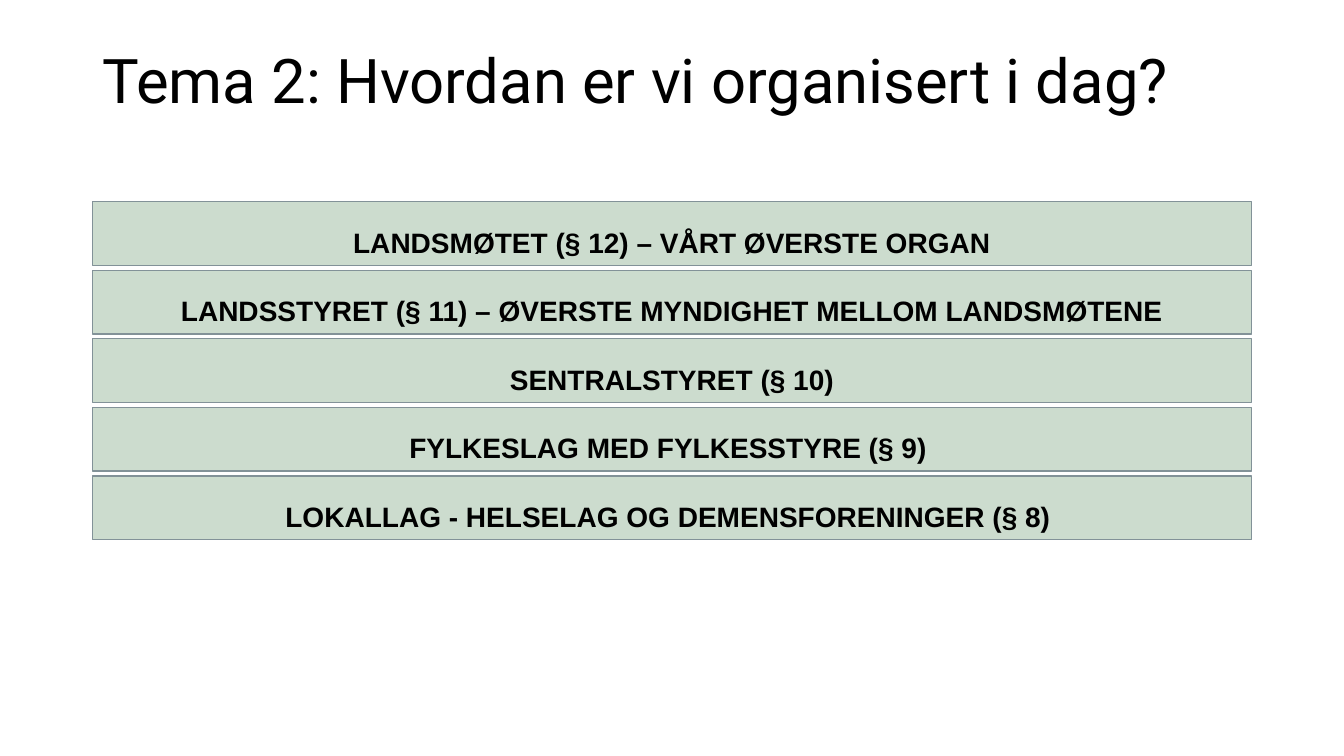
from pptx import Presentation
from pptx import util as u
from pptx.dml.color import RGBColor
from pptx.enum import shapes, text

BLACK = RGBColor(0x00, 0x00, 0x00)
SAGE = RGBColor(0xCC, 0xDC, 0xCE)
SLATE = RGBColor(0x82, 0x92, 0x98)

LEFT, WIDTH = 66, 828
FIRST_LEVEL_TOP, LEVEL_HEIGHT, LEVEL_PITCH = 144, 45.5, 49

LEVELS = [
    "LANDSMØTET (§ 12) – VÅRT ØVERSTE ORGAN",
    "LANDSSTYRET (§ 11) – ØVERSTE MYNDIGHET MELLOM LANDSMØTENE",
    "SENTRALSTYRET (§ 10)",
    "FYLKESLAG MED FYLKESSTYRE (§ 9) ",
    "LOKALLAG - HELSELAG OG DEMENSFORENINGER (§ 8) ",
]


class OrganisationSlide:
    def __init__(self, slide):
        self.slide = slide
        self.title_font = "Roboto"
        self.level_font = "Arial"

    def set_wording(self, shape, wording, font_name, size, bold, align, spacing):
        """Put one formatted, vertically centred paragraph in a shape."""
        frame = shape.text_frame
        frame.text = wording
        frame.word_wrap = True
        frame.vertical_anchor = text.MSO_ANCHOR.MIDDLE
        paragraph = frame.paragraphs[0]
        paragraph.alignment = align
        paragraph.line_spacing = spacing
        font = paragraph.runs[0].font
        font.name, font.size, font.bold = font_name, u.Pt(size), bold
        font.color.rgb = BLACK

    def title(self, wording, top, height):
        heading = self.slide.shapes.add_textbox(
            u.Pt(LEFT), u.Pt(top), u.Pt(WIDTH), u.Pt(height))
        self.set_wording(heading, wording, self.title_font, 44, False,
                         text.PP_ALIGN.LEFT, 0.9)

    def level(self, wording, top):
        bar = self.slide.shapes.add_shape(
            shapes.MSO_SHAPE.RECTANGLE,
            u.Pt(LEFT), u.Pt(top), u.Pt(WIDTH), u.Pt(LEVEL_HEIGHT))
        bar.shadow.inherit = False
        bar.fill.solid()
        bar.fill.fore_color.rgb = SAGE
        bar.line.color.rgb = SLATE
        bar.line.width = u.Pt(1)
        self.set_wording(bar, wording, self.level_font, 20, True,
                         text.PP_ALIGN.CENTER, 1.5)


def main():
    deck = Presentation()
    deck.slide_width, deck.slide_height = u.Pt(960), u.Pt(540)
    page = OrganisationSlide(deck.slides.add_slide(deck.slide_layouts[6]))
    page.title("Tema 2: Hvordan er vi organisert i dag?", 29, 62)
    for rank, wording in enumerate(LEVELS):
        page.level(wording, FIRST_LEVEL_TOP + rank * LEVEL_PITCH)
    deck.save("out.pptx")


if __name__ == "__main__":
    main()
